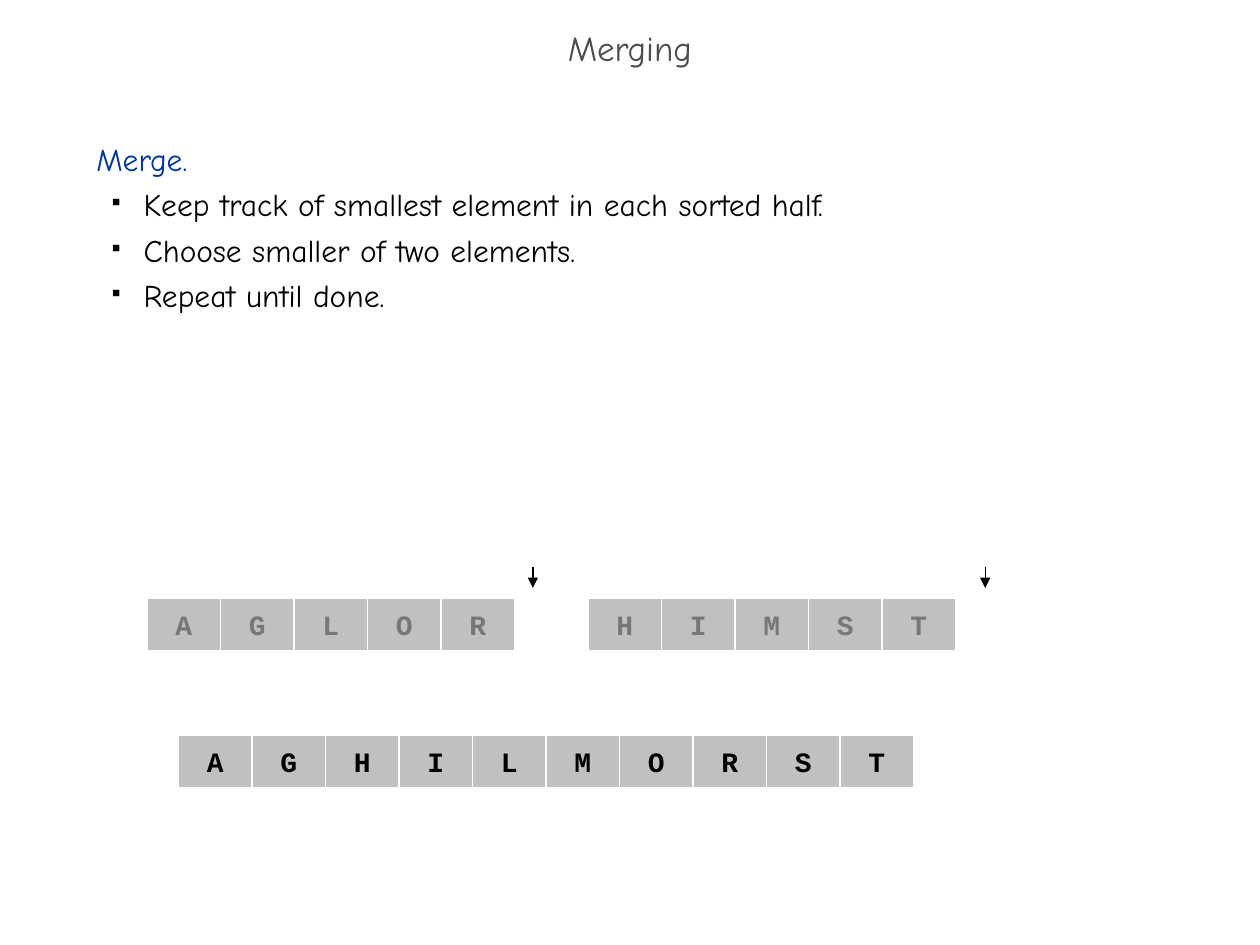
from dataclasses import dataclass

import pptx
import pptx.dml.color
import pptx.enum.shapes
import pptx.enum.text
import pptx.oxml
import pptx.oxml.ns
import pptx.util
from pptx.util import Pt


@dataclass(frozen=True)
class Theme:
    text_font: str = "Comic Neue"
    cell_font: str = "Courier New"
    title_size: int = 20
    body_size: int = 18
    cell_size: int = 16
    title: str = "4D4D4D"
    heading: str = "003399"
    ink: str = "000000"
    used: str = "777777"
    cell: str = "C0C0C0"
    border: str = "FFFFFF"


theme = Theme()
rgb = pptx.dml.color.RGBColor.from_string
CENTER = pptx.enum.text.PP_ALIGN.CENTER
MIDDLE = pptx.enum.text.MSO_ANCHOR.MIDDLE


def style(para, name, size, color, bold=False):
    """Set the font that all runs of the paragraph share."""
    para.font.name = name
    para.font.size = Pt(size)
    para.font.color.rgb = rgb(color)
    para.font.bold = bold


def append_xml(parent, tag, attributes="", children=""):
    """Append one DrawingML element, such as a bullet or an arrowhead."""
    namespace = pptx.oxml.ns.nsdecls("a")
    parent.append(pptx.oxml.parse_xml(
        f"<a:{tag} {namespace} {attributes}>{children}</a:{tag}>"))


deck = pptx.Presentation()
deck.slide_width, deck.slide_height = Pt(720), Pt(540)
page = deck.slides.add_slide(deck.slide_layouts[6])

# Sorted halves and the merged array: left, top, letters, letter colour
CELL_WIDTH, CELL_HEIGHT = 42, 30
arrays = [
    (84, 342, "AGLOR", theme.used),
    (336, 342, "HIMST", theme.used),
    (102, 420, "AGHILMORST", theme.ink),
]
for left, top, letters, color in arrays:
    for index, letter in enumerate(letters):
        cell = page.shapes.add_shape(
            pptx.enum.shapes.MSO_SHAPE.RECTANGLE,
            Pt(left + index * CELL_WIDTH), Pt(top), Pt(CELL_WIDTH), Pt(CELL_HEIGHT))
        cell.shadow.inherit = False
        cell.fill.solid()
        cell.fill.fore_color.rgb = rgb(theme.cell)
        cell.line.color.rgb = rgb(theme.border)
        cell.line.width = Pt(0.75)
        cell.text_frame.word_wrap = False
        cell.text_frame.vertical_anchor = MIDDLE
        para = cell.text_frame.paragraphs[0]
        para.text = letter
        para.alignment = CENTER
        style(para, theme.cell_font, theme.cell_size, color, bold=True)

# Title
box = page.shapes.add_textbox(Pt(0), Pt(12), Pt(720), Pt(36))
box.text_frame.word_wrap = True
box.text_frame.vertical_anchor = MIDDLE
para = box.text_frame.paragraphs[0]
para.text = "Merging"
para.alignment = CENTER
para.line_spacing = 0.7
style(para, theme.text_font, theme.title_size, theme.title)

# Heading and bulleted steps
box = page.shapes.add_textbox(Pt(48), Pt(72), Pt(618), Pt(426))
box.text_frame.word_wrap = True
para = box.text_frame.paragraphs[0]
para.text = "Merge."
para.line_spacing = Pt(26)
style(para, theme.text_font, theme.body_size, theme.heading)

steps = [
    "Keep track of smallest element in each sorted half.",
    "Choose smaller of two elements.",
    "Repeat until done.",
]
for step in steps:
    para = box.text_frame.add_paragraph()
    para.text = step
    para.level = 1
    para.line_spacing = Pt(26)
    properties = para._p.get_or_add_pPr()
    properties.set("marL", str(Pt(27)))
    properties.set("indent", str(Pt(-18)))
    append_xml(properties, "buClr", children=f'<a:srgbClr val="{theme.ink}"/>')
    append_xml(properties, "buSzPct", 'val="35000"')
    append_xml(properties, "buChar", 'char="■"')
    style(para, theme.text_font, theme.body_size, theme.ink)

# Pointers just past the end of each half
for x in (304.5, 563):
    pointer = page.shapes.add_connector(
        pptx.enum.shapes.MSO_CONNECTOR.STRAIGHT, Pt(x), Pt(324), Pt(x), Pt(336))
    pointer.line.color.rgb = rgb(theme.ink)
    pointer.line.width = Pt(0.75)
    append_xml(pointer.line._get_or_add_ln(), "tailEnd", 'type="triangle"')
    append_xml(pointer._element.spPr, "effectLst")

deck.save("out.pptx")
